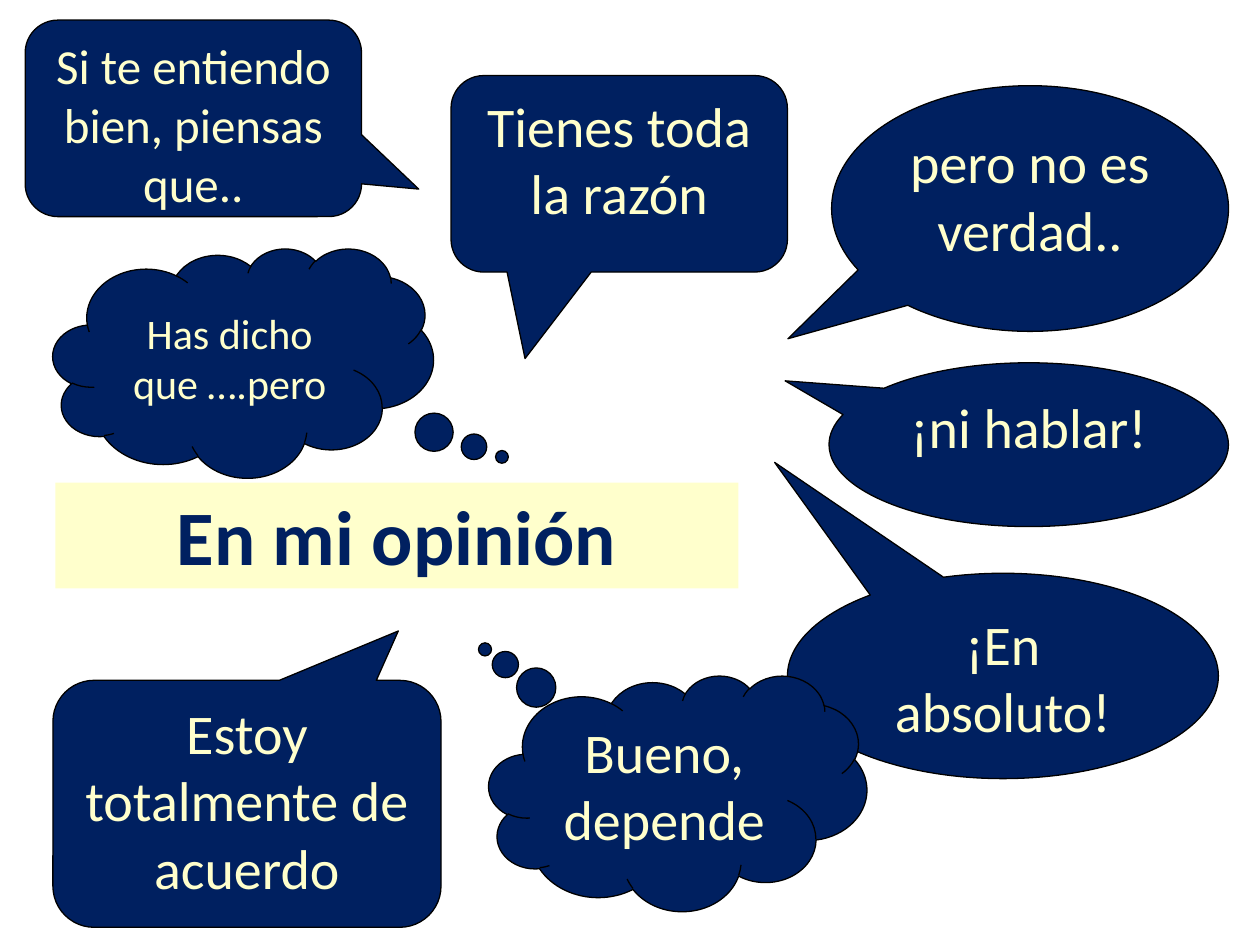
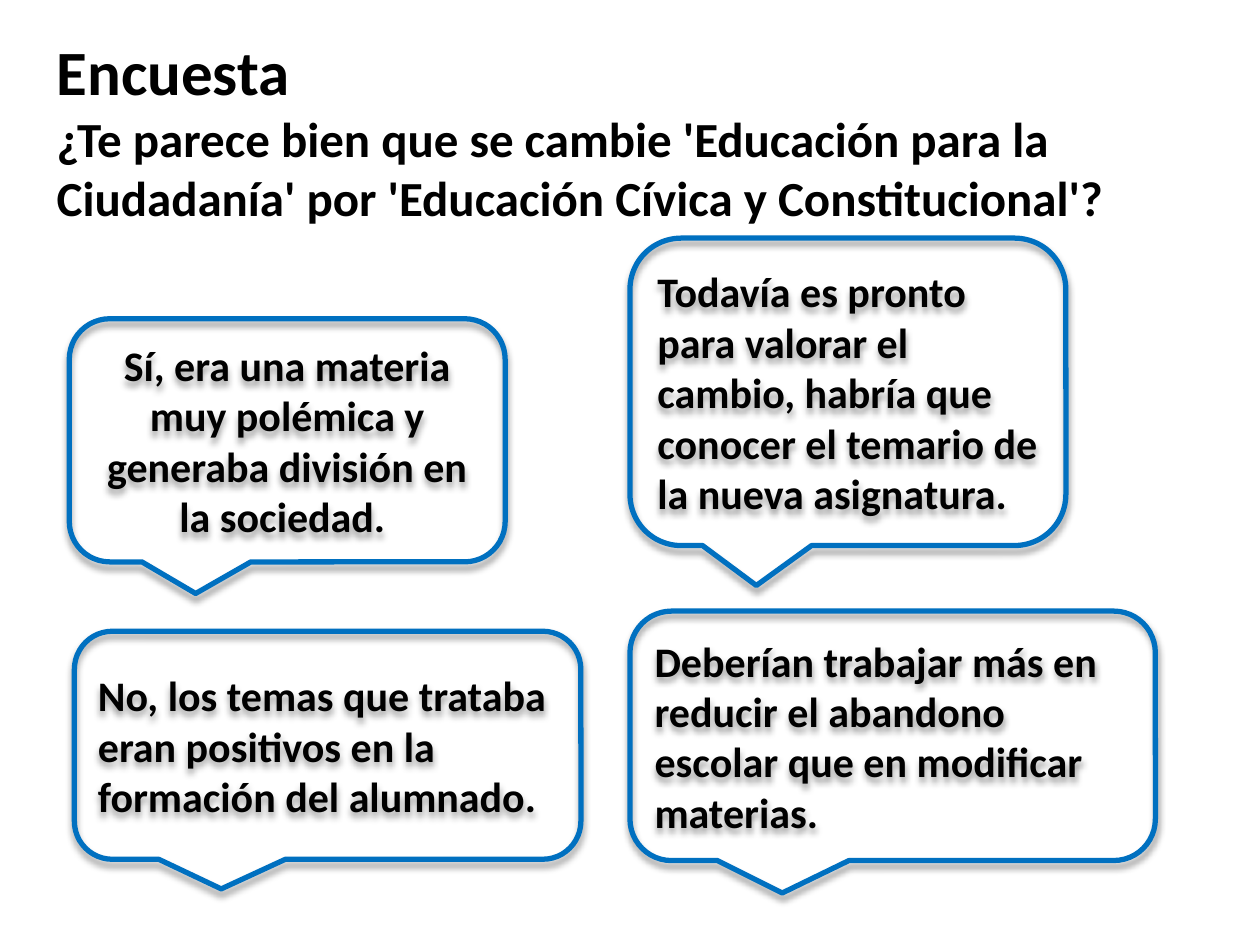
from dataclasses import dataclass

from lxml import etree
from pptx import Presentation
from pptx.dml.color import RGBColor
from pptx.enum import shapes, text
from pptx.oxml import ns
from pptx.util import Inches, Pt


@dataclass(frozen=True)
class Theme:
    font: str = "Calibri"
    navy: str = "002060"
    cream: str = "FFFFCC"
    blue: str = "0070C0"
    black: str = "000000"
    banner: int = 44
    head: int = 36
    large: int = 32
    mid: int = 28
    small: int = 24


T = Theme()
KIND = shapes.MSO_SHAPE
ROUND = KIND.ROUNDED_RECTANGULAR_CALLOUT
OVAL = KIND.OVAL_CALLOUT
CLOUD = KIND.CLOUD_CALLOUT
TOP, MID = text.MSO_ANCHOR.TOP, text.MSO_ANCHOR.MIDDLE
LEFT, CENTER = text.PP_ALIGN.LEFT, text.PP_ALIGN.CENTER

# Opinions: kind, box, tail tip from the centre, size, anchor, words
OPINIONS = [
    (OVAL, (6.58, 2.88, 3.17, 1.3), (-0.61, -0.39), T.large, TOP, "¡ni hablar!"),
    (ROUND, (3.58, 0.6, 2.67, 1.56), (-0.28, 0.94), T.large, TOP, "Tienes toda la razón"),
    (ROUND, (0.42, 5.4, 3.08, 1.96), (0.39, -0.7), T.large, TOP, "Estoy totalmente de acuerdo"),
    (OVAL, (6.6, 0.68, 3.15, 1.95), (-0.61, 0.53), T.large, TOP, "pero no es verdad.."),
    (OVAL, (6.25, 4.55, 3.42, 1.63), (-0.53, -1.04), T.large, TOP, "¡En absoluto!"),
    (CLOUD, (0.42, 1.97, 3.02, 1.82), (0.68, 0.41), T.small, MID, "Has dicho que ….pero"),
    (CLOUD, (3.88, 5.36, 3, 1.87), (-0.51, -0.61), T.large, TOP, "Bueno, depende"),
    (ROUND, (0.2, 0.16, 2.67, 1.56), (0.67, 0.36), T.mid, TOP, "Si te entiendo bien, piensas que.."),
]

# Survey answers: box, alignment, words
ANSWERS = [
    ((0.55, 2.53, 3.46, 1.93), CENTER,
     "Sí, era una materia muy polémica y generaba división en la sociedad. "),
    ((5, 1.89, 3.46, 2.44), LEFT,
     "Todavía es pronto para valorar el cambio, habría que conocer el temario "
     "de la nueva asignatura."),
    ((0.59, 5.01, 4.02, 1.81), LEFT,
     "No, los temas que trataba eran positivos en la formación del alumnado."),
    ((5, 4.85, 4.17, 1.98), LEFT,
     "Deberían trabajar más en reducir el abandono escolar que en modificar materias."),
]


def rgb(code):
    return RGBColor.from_string(code)


def write(shape, lines, color, bold, align, anchor):
    """Fill a shape with (words, size) lines in one style."""
    frame = shape.text_frame
    frame.word_wrap = True
    frame.auto_size = text.MSO_AUTO_SIZE.NONE
    frame.vertical_anchor = anchor
    frame.text = "\n".join(words for words, _ in lines)
    for par, (_, size) in zip(frame.paragraphs, lines):
        par.alignment = align
        for run in par.runs:
            font = run.font
            font.name, font.size, font.bold = T.font, Pt(size), bold
            font.color.rgb = rgb(color)


def title(slide, box, lines, color, align):
    """Move and format the title placeholder."""
    shape = slide.shapes.title
    shape.left, shape.top, shape.width, shape.height = map(Inches, box)
    write(shape, lines, color, True, align, TOP)
    return shape


def bubble(slide, kind, box, tip, line, width):
    """Add a callout whose tail points at tip."""
    shape = slide.shapes.add_shape(kind, *map(Inches, box))
    shape.adjustments[0], shape.adjustments[1] = tip
    shape.shadow.inherit = False
    shape.line.color.rgb = rgb(line)
    shape.line.width = Pt(width)
    return shape


def shade(shape):
    """Drop a soft black shadow straight down."""
    effects = shape._element.spPr.find(ns.qn("a:effectLst"))
    drop = etree.SubElement(effects, ns.qn("a:outerShdw"), blurRad=str(Pt(4)),
                            dist=str(Pt(3)), dir="5400000", rotWithShape="0")
    tint = etree.SubElement(drop, ns.qn("a:srgbClr"), val=T.black)
    etree.SubElement(tint, ns.qn("a:alpha"), val="40000")


def opinions(slide):
    # Banner
    banner = title(slide, (0.44, 3.83, 5.42, 0.84),
                   [("En mi opinión", T.banner)], T.navy, CENTER)
    banner.fill.solid()
    banner.fill.fore_color.rgb = rgb(T.cream)

    # Speech and thought bubbles
    for kind, box, tip, size, anchor, words in OPINIONS:
        shape = bubble(slide, kind, box, tip, T.black, 0.75)
        shape.fill.solid()
        shape.fill.fore_color.rgb = rgb(T.navy)
        write(shape, [(words, size)], T.cream, False, CENTER, anchor)


def survey(slide):
    # Question
    title(slide, (0.35, 0.21, 9.29, 1.65),
          [("Encuesta", T.head),
           ("¿Te parece bien que se cambie 'Educación para la Ciudadanía' "
            "por 'Educación Cívica y Constitucional'?", T.mid)],
          T.black, LEFT)

    # Outlined answers
    for box, align, words in ANSWERS:
        shape = bubble(slide, ROUND, box, (-0.21, 0.63), T.blue, 3)
        shape.fill.background()
        shade(shape)
        write(shape, [(words, T.small)], T.black, True, align, MID)


def main():
    deck = Presentation()
    deck.slide_width, deck.slide_height = Inches(10), Inches(7.5)
    layout = deck.slide_layouts.get_by_name("Title Only")
    for build in (opinions, survey):
        build(deck.slides.add_slide(layout))
    deck.save("out.pptx")


if __name__ == "__main__":
    main()
